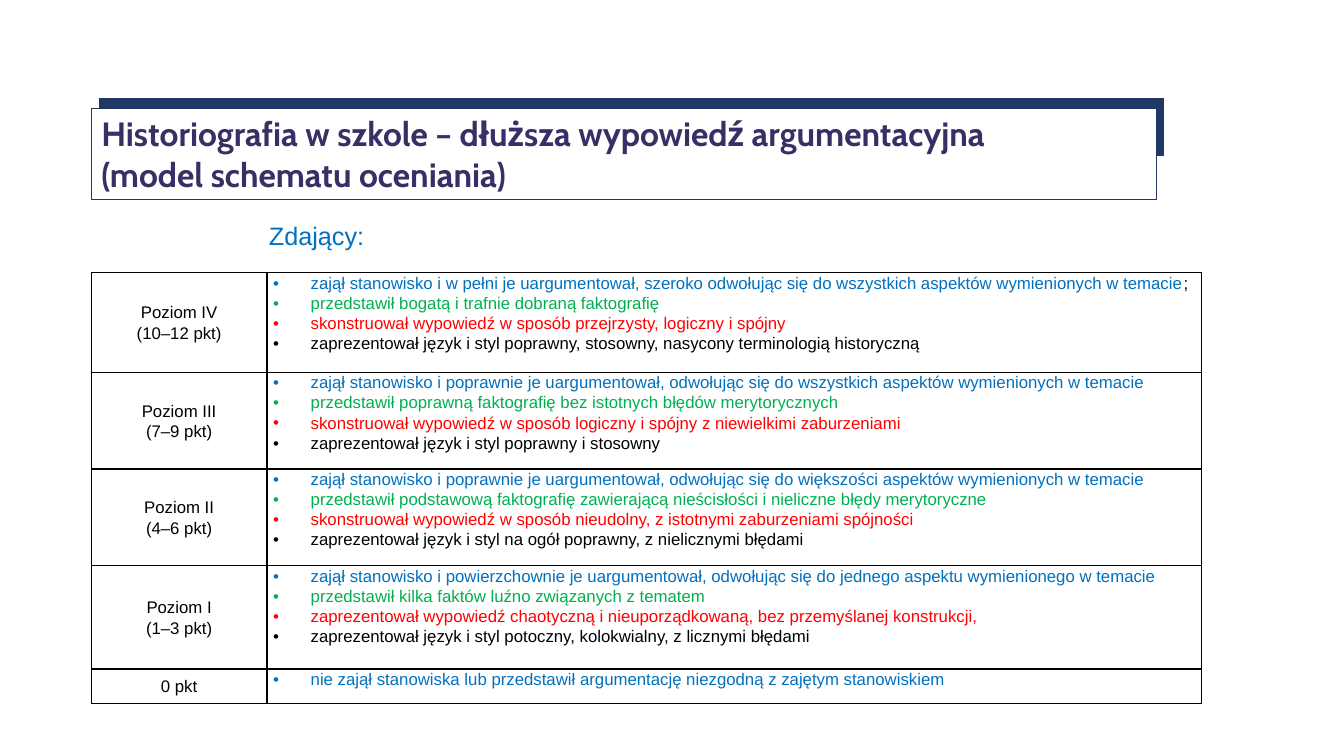
from lxml.etree import SubElement
from pptx import Presentation
from pptx.dml.color import RGBColor
from pptx.enum.shapes import MSO_SHAPE as Shape
from pptx.enum.text import MSO_ANCHOR as Anchor, MSO_AUTO_SIZE as Auto, PP_ALIGN as Align
from pptx.oxml import parse_xml
from pptx.oxml.ns import qn
from pptx.util import Cm, Pt

WHITE = RGBColor(0xFF, 0xFF, 0xFF)
BLACK = RGBColor(0, 0, 0)
NAVY = RGBColor(0x20, 0x38, 0x64)
PLUM = RGBColor(0x39, 0x2E, 0x65)
BLUE = RGBColor(0x00, 0x70, 0xC0)
GREEN = RGBColor(0x00, 0xB0, 0x50)
RED = RGBColor(0xFF, 0, 0)
TINTS = [BLUE, GREEN, RED, BLACK]

BORDER = (
    '<a:{} xmlns:a="http://schemas.openxmlformats.org/drawingml/2006/main" w="12700">'
    '<a:solidFill><a:srgbClr val="000000"/></a:solidFill></a:{}>'
)

TITLE = [
    "Historiografia w szkole – dłuższa wypowiedź argumentacyjna",
    "(model schematu oceniania)",
]

LEVELS = [
    (2.51, ["Poziom IV", "(10–12 pkt)"], [
        "zajął stanowisko i w pełni je uargumentował, szeroko odwołując się do wszystkich aspektów wymienionych w temacie",
        "przedstawił bogatą i trafnie dobraną faktografię",
        "skonstruował wypowiedź w sposób przejrzysty, logiczny i spójny",
        "zaprezentował język i styl poprawny, stosowny, nasycony terminologią historyczną",
    ]),
    (2.44, ["Poziom III", "(7–9 pkt)"], [
        "zajął stanowisko i poprawnie je uargumentował, odwołując się do wszystkich aspektów wymienionych w temacie",
        "przedstawił poprawną faktografię bez istotnych błędów merytorycznych",
        "skonstruował wypowiedź w sposób logiczny i spójny z niewielkimi zaburzeniami",
        "zaprezentował język i styl poprawny i stosowny",
    ]),
    (2.44, ["Poziom II", "(4–6 pkt)"], [
        "zajął stanowisko i poprawnie je uargumentował, odwołując się do większości aspektów wymienionych w temacie",
        "przedstawił podstawową faktografię zawierającą nieścisłości i nieliczne błędy merytoryczne",
        "skonstruował wypowiedź w sposób nieudolny, z istotnymi zaburzeniami spójności",
        "zaprezentował język i styl na ogół poprawny, z nielicznymi błędami",
    ]),
    (2.6, ["Poziom I", "(1–3 pkt)"], [
        "zajął stanowisko i powierzchownie je uargumentował, odwołując się do jednego aspektu wymienionego w temacie",
        "przedstawił kilka faktów luźno związanych z tematem",
        "zaprezentował wypowiedź chaotyczną i nieuporządkowaną, bez przemyślanej konstrukcji,",
        "zaprezentował język i styl potoczny, kolokwialny, z licznymi błędami",
    ]),
    (0.86, ["0 pkt"], [
        "nie zajął stanowiska lub przedstawił argumentację niezgodną z zajętym stanowiskiem",
    ]),
]


class Deck:
    font = "Arial"
    head = "Cabin"
    inset = Cm(0.15)
    indent = Cm(0.95)

    def __init__(self):
        self.prs = Presentation()
        self.prs.slide_width, self.prs.slide_height = Cm(33.87), Cm(19.05)
        self.slide = self.prs.slides.add_slide(self.prs.slide_layouts[5])

    def run(self, para, text, size, color, font=None, bold=False):
        run = para.add_run()
        run.text = text
        run.font.name = font or self.font
        run.font.size = Pt(size)
        run.font.bold = bold
        run.font.color.rgb = color

    def paint(self, shape, fill):
        shape.fill.solid()
        shape.fill.fore_color.rgb = fill
        shape.line.color.rgb = NAVY
        shape.line.width = Pt(0.75)

    def paras(self, frame, count):
        for _ in range(count - 1):
            frame.add_paragraph()
        return frame.paragraphs

    def title(self, lines, left, top, width, height):
        title = self.slide.shapes.title
        title.left, title.top, title.width, title.height = left, top, width, height
        self.paint(title, WHITE)
        frame = title.text_frame
        frame.auto_size = Auto.NONE
        frame.word_wrap = True
        frame.vertical_anchor = Anchor.TOP
        for para, line in zip(self.paras(frame, len(lines)), lines):
            para.alignment = Align.LEFT
            self.run(para, line, 24, PLUM, self.head, True)

    def band(self, *box):
        band = self.slide.shapes.add_shape(Shape.RECTANGLE, *box)
        band.shadow.inherit = False
        self.paint(band, NAVY)
        self.slide.shapes.title.element.addprevious(band.element)

    def label(self, text, *box):
        frame = self.slide.shapes.add_textbox(*box).text_frame
        frame.word_wrap = False
        frame.auto_size = Auto.SHAPE_TO_FIT_TEXT
        self.run(frame.paragraphs[0], text, 18, BLUE)

    def bullet(self, para):
        props = para._p.get_or_add_pPr()
        props.set("marL", str(self.indent))
        props.set("indent", str(-self.indent))
        SubElement(props, qn("a:buFont")).set("typeface", self.font)
        SubElement(props, qn("a:buChar")).set("char", "•")

    def cell(self, cell, lines, tints, listed):
        cell.margin_left = cell.margin_right = self.inset
        cell.margin_top = cell.margin_bottom = 0
        cell.vertical_anchor = Anchor.TOP if listed else Anchor.MIDDLE
        cell.fill.background()
        props = cell._tc.get_or_add_tcPr()
        for spot, side in enumerate(["lnL", "lnR", "lnT", "lnB"]):
            props.insert(spot, parse_xml(BORDER.format(side, side)))
        for para, line, tint in zip(self.paras(cell.text_frame, len(lines)), lines, tints):
            if listed:
                self.bullet(para)
            else:
                para.alignment = Align.CENTER
            para.line_spacing = 1.07
            self.run(para, line, 12, tint)

    def table(self, levels, cols, left, top):
        height = Cm(sum(level[0] for level in levels))
        table = self.slide.shapes.add_table(
            len(levels), len(cols), left, top, sum(cols), height).table
        table.first_row = table.horz_banding = False
        for col, width in zip(table.columns, cols):
            col.width = width
        for num, (high, name, rules) in enumerate(levels):
            table.rows[num].height = Cm(high)
            self.cell(table.cell(num, 0), name, [BLACK] * len(name), False)
            self.cell(table.cell(num, 1), rules, TINTS, True)
        return table


def main():
    deck = Deck()
    deck.title(TITLE, Cm(2.3), Cm(2.73), Cm(26.85), Cm(2.31))
    deck.band(Cm(2.51), Cm(2.49), Cm(26.82), Cm(1.42))
    table = deck.table(LEVELS, [Cm(4.43), Cm(23.54)], Cm(2.3), Cm(6.87))
    deck.run(table.cell(0, 1).text_frame.paragraphs[0], ";", 12, BLACK)
    deck.label("Zdający:", Cm(6.53), Cm(5.43), Cm(2.92), Cm(1.03))
    deck.prs.save("out.pptx")


if __name__ == "__main__":
    main()
